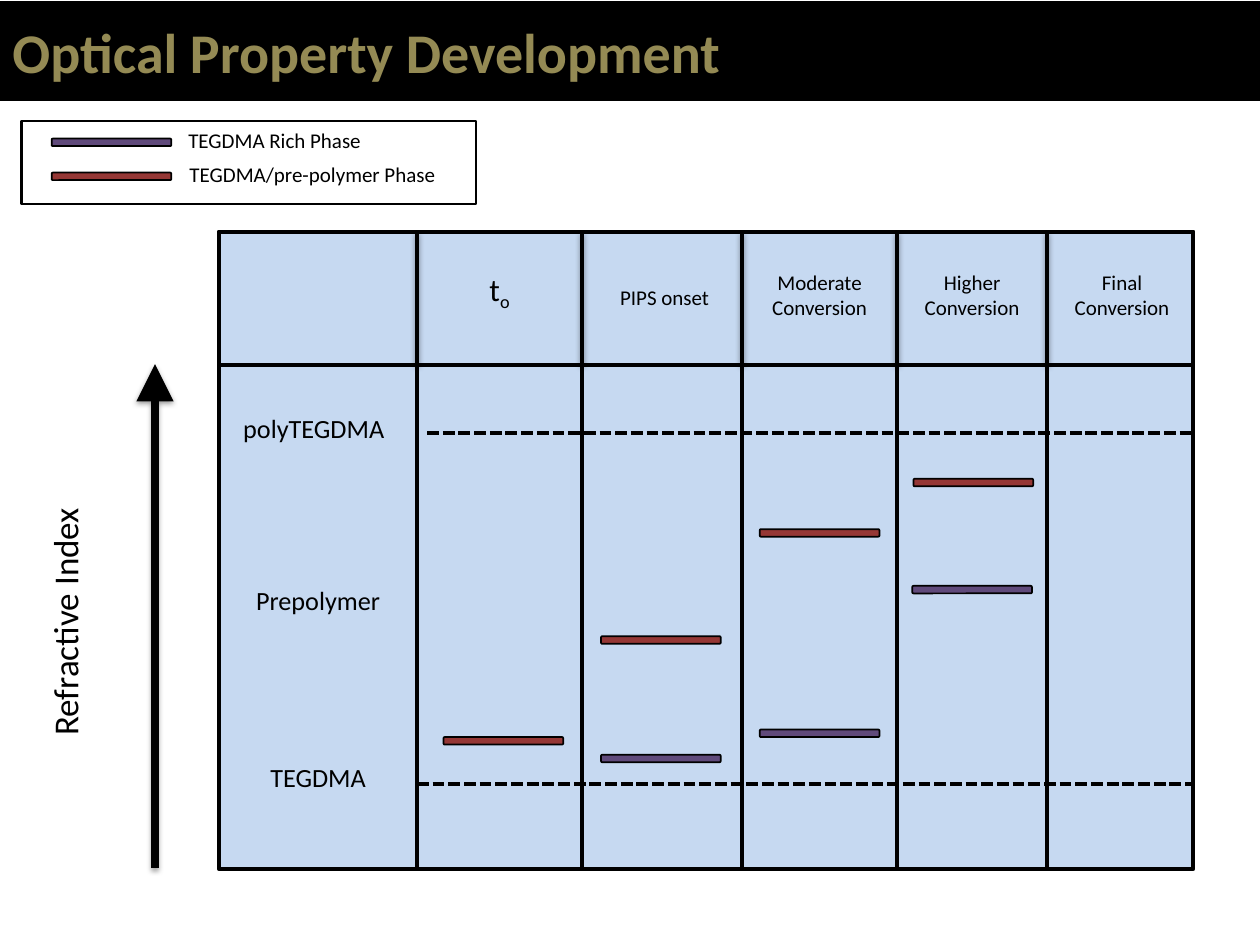
import pptx
import pptx.dml.color
import pptx.enum.dml
import pptx.enum.shapes
import pptx.enum.text
import pptx.oxml
import pptx.oxml.ns
import pptx.util

Inches = pptx.util.Inches
Pt = pptx.util.Pt
color = pptx.dml.color.RGBColor.from_string
SHAPE = pptx.enum.shapes.MSO_SHAPE
ANCHOR = pptx.enum.text.MSO_ANCHOR
FIT = pptx.enum.text.MSO_AUTO_SIZE
ALIGN = pptx.enum.text.PP_ALIGN

BLACK, PALE_BLUE, PURPLE, RED, GOLD = "000000", "C6D9F1", "604A7B", "953735", "948A54"
NAMESPACE = pptx.oxml.ns.nsdecls("a")
NO_EFFECT = f"<a:effectLst {NAMESPACE}/>"
SOFT_SHADOW = (
    f'<a:effectLst {NAMESPACE}><a:outerShdw blurRad="{Pt(3.1)}" dist="{Pt(1.6)}" '
    'dir="5400000" rotWithShape="0"><a:srgbClr val="000000"><a:alpha val="38000"/>'
    "</a:srgbClr></a:outerShdw></a:effectLst>"
)

presentation = pptx.Presentation()
presentation.slide_width = Inches(10)
presentation.slide_height = Inches(7.5)
slide = presentation.slides.add_slide(presentation.slide_layouts[6])


def add_box(kind, bounds, fill, line_width):
    box = slide.shapes.add_shape(kind, *map(Inches, bounds))
    box.shadow.inherit = False
    if fill:
        box.fill.solid()
        box.fill.fore_color.rgb = color(fill)
    else:
        box.fill.background()
    box.line.color.rgb = color(BLACK)
    box.line.width = Pt(line_width)


def add_line(x1, y1, x2, y2, width=2.25, effect=NO_EFFECT):
    line = slide.shapes.add_connector(
        pptx.enum.shapes.MSO_CONNECTOR.STRAIGHT, *map(Inches, (x1, y1, x2, y2))
    )
    line.line.color.rgb = color(BLACK)
    line.line.width = Pt(width)
    line._element.spPr.append(pptx.oxml.parse_xml(effect))
    return line


# Title bar and grid
grid_left, grid_top, grid_width, grid_height = 1.74, 1.84, 7.73, 5.06
header_bottom, grid_bottom, grid_right = 2.89, 6.89, 9.47
column_edges = [3.31, 4.62, 5.89, 7.12, 8.31]

add_box(SHAPE.RECTANGLE, (0, 0.01, 10.01, 0.79), BLACK, 0.75)
for height in (grid_height, 1.06):
    add_box(SHAPE.RECTANGLE, (grid_left, grid_top, grid_width, height), PALE_BLUE, 2.25)
for edge in column_edges:
    add_line(edge, grid_top, edge, header_bottom, effect=SOFT_SHADOW)
    add_line(edge, header_bottom, edge, grid_bottom)

# Refractive index axis
axis = add_line(1.23, grid_bottom, 1.23, header_bottom, 4.25, SOFT_SHADOW)
axis.line._get_or_add_ln().append(
    pptx.oxml.parse_xml(f'<a:tailEnd {NAMESPACE} type="triangle" w="lg" len="lg"/>')
)

# Reference levels
for start, level in ((3.39, 3.44), (3.31, 6.22)):
    reference = add_line(start, level, grid_right, level)
    reference.line.dash_style = pptx.enum.dml.MSO_LINE.SQUARE_DOT

# Phase markers, the first of each colour being its legend key
phase_markers = {
    PURPLE: [(0.41, 1.1), (4.77, 5.99), (6.03, 5.79), (7.24, 4.65)],
    RED: [(0.41, 1.37), (3.52, 5.85), (4.77, 5.05), (6.03, 4.2), (7.25, 3.8)],
}
for phase_color, positions in phase_markers.items():
    for left, top in positions:
        add_box(SHAPE.ROUNDED_RECTANGLE, (left, top, 0.95, 0.06), phase_color, 1)
add_box(SHAPE.RECTANGLE, (0.17, 0.96, 3.61, 0.66), None, 1.25)

# Text: bounds, runs, size
labels = [
    ((0, 0.01, 10.52, 0.79), ["Optical Property Development"], 32),
    ((1.6, 3.22, 1.78, 0.44), ["polyTEGDMA"], 15),
    ((1.74, 4.59, 1.57, 0.35), ["Prepolymer"], 15),
    ((1.74, 5.99, 1.57, 0.44), ["TEGDMA"], 15),
    ((-0.8, 4.69, 2.68, 0.49), ["Refractive Index"], 20),
    ((3.31, 2.09, 1.31, 0.5), ["t", "o"], 18),
    ((4.62, 2.21, 1.31, 0.37), ["PIPS onset"], 12),
    ((5.89, 2.09, 1.23, 0.62), ["Moderate Conversion"], 12),
    ((7.12, 2.09, 1.19, 0.62), ["Higher Conversion"], 12),
    ((8.31, 2.09, 1.19, 0.62), ["Final Conversion"], 12),
    ((1.26, 0.96, 1.84, 0.3), ["TEGDMA Rich Phase"], 12),
    ((1.26, 1.23, 2.44, 0.3), ["TEGDMA/pre-polymer Phase"], 12),
]
for bounds, parts, size in labels:
    is_title = size == 32
    label = slide.shapes.add_textbox(*map(Inches, bounds))
    label.rotation = 270 if parts == ["Refractive Index"] else 0
    frame_format = {
        "word_wrap": True,
        "auto_size": FIT.NONE if is_title else FIT.SHAPE_TO_FIT_TEXT,
        "vertical_anchor": ANCHOR.MIDDLE if is_title else ANCHOR.TOP,
    }
    for name, value in frame_format.items():
        setattr(label.text_frame, name, value)
    paragraph = label.text_frame.paragraphs[0]
    paragraph.alignment = ALIGN.LEFT if is_title else ALIGN.CENTER
    font_format = {"name": "Calibri", "size": Pt(size), "bold": is_title}
    for index, part in enumerate(parts):
        run = paragraph.add_run()
        run.text = part
        for name, value in font_format.items():
            setattr(run.font, name, value)
        run.font.color.rgb = color(GOLD if is_title else BLACK)
        if index:  # the second run is a subscript
            run.font._element.set("baseline", "-25000")

presentation.save("out.pptx")
